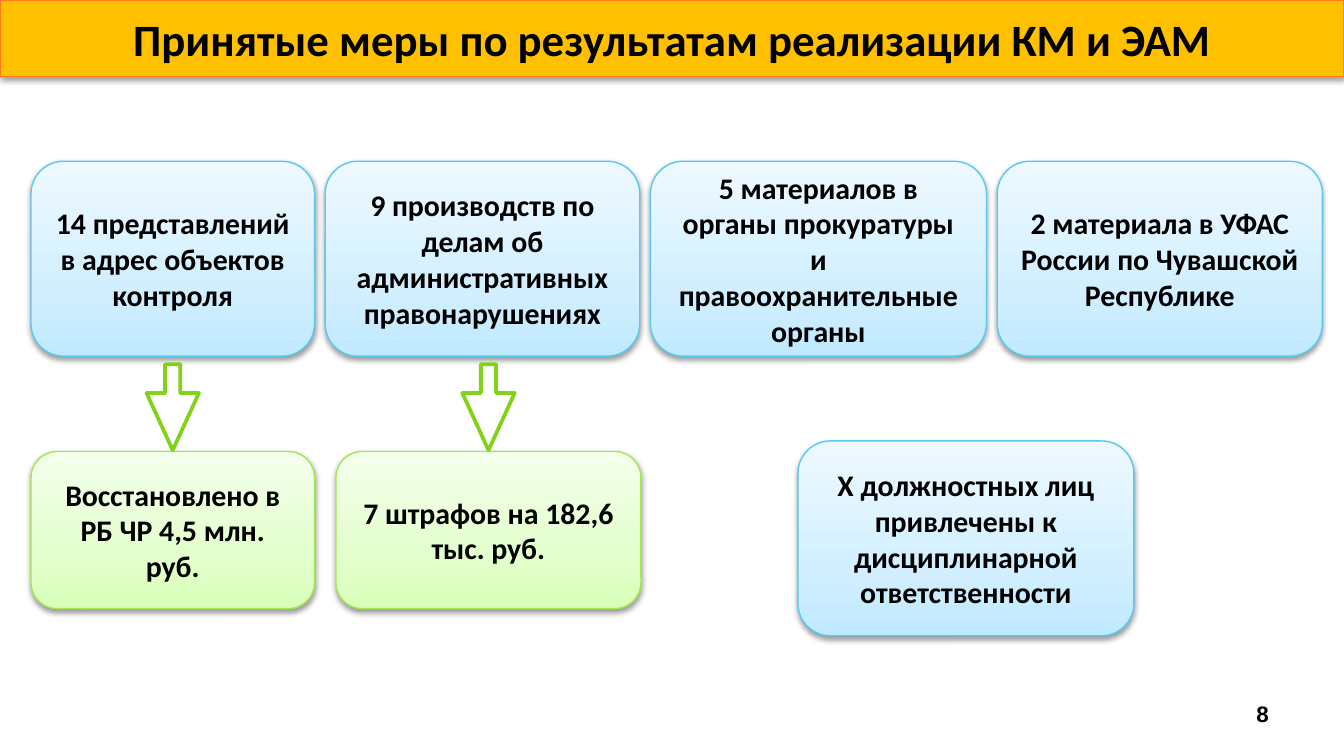
from copy import deepcopy

from lxml import etree
from pptx import Presentation
from pptx.dml import color
from pptx.enum import shapes, text
from pptx.oxml import ns
from pptx.util import Pt

BLACK = "000000"
BLUE = {"stops": [(0, "BFE9FF"), (0.35, "D2EFFF"), (1, "EEF9FF")], "line": "58C9F1"}
GREEN = {"stops": [(0, "D8FFB8"), (0.35, "E3FFCD"), (1, "F4FFEC")], "line": "A4E94C"}
ARROW_GREEN = "81D31A"

LEFT, GAP = 16.6, 5.75
MEASURES_TOP, MEASURES_HEIGHT = 86.4, 104.4
OUTCOMES_TOP, OUTCOMES_HEIGHT = 241.9, 84.2
ARROW_WIDTH, ARROW_HEIGHT = 28.1, 46.1

MEASURES = [
    (151.9, "14 представлений в адрес объектов контроля"),
    (168.5, "9 производств по делам об административных правонарушениях"),
    (180, "5 материалов в органы прокуратуры и правоохранительные органы"),
    (174.2, "2 материала в УФАС России по Чувашской Республике"),
]
OUTCOMES = [
    (LEFT, 151.9, "Восстановлено в РБ ЧР 4,5 млн. руб."),
    (180, 163.4, "7 штрафов на 182,6 тыс. руб."),
]


def rgb(value):
    return color.RGBColor.from_string(value)


def set_text(frame, words, size, align, font="Calibri"):
    para = frame.paragraphs[0]
    para.alignment = align
    span = para.add_run()
    span.text = words
    for name, value in {"size": Pt(size), "name": font, "bold": True}.items():
        setattr(span.font, name, value)
    span.font.color.rgb = rgb(BLACK)


def add_outlined(page, kind, box, line, width):
    shape = page.shapes.add_shape(kind, *map(Pt, box))
    shape.shadow.inherit = False
    shape.line.color.rgb = rgb(line)
    shape.line.width = Pt(width)
    return shape


def add_drop_shadow(shape):
    effects = shape._element.spPr.find(ns.qn("a:effectLst"))
    shadow = etree.SubElement(
        effects, ns.qn("a:outerShdw"), blurRad=str(Pt(3.1)), dist=str(Pt(1.6)),
        dir="5400000", rotWithShape="0")
    tint = etree.SubElement(shadow, ns.qn("a:srgbClr"), val=BLACK)
    etree.SubElement(tint, ns.qn("a:alpha"), val="38000")


def fill_upward(shape, stops):
    """Fill with a gradient whose first stop lies at the bottom edge."""
    shape.fill.gradient()
    shape.fill.gradient_angle = 90
    stop_list = shape._element.spPr.find(".//" + ns.qn("a:gsLst"))
    stop_list.append(deepcopy(stop_list[0]))
    for stop, (position, tint) in zip(shape.fill.gradient_stops, stops):
        stop.position = position
        stop.color.rgb = rgb(tint)


def add_panel(page, box, words, line, size):
    """Add a rounded panel with a drop shadow and centred bold text."""
    panel = add_outlined(page, shapes.MSO_SHAPE.ROUNDED_RECTANGLE, box, line, 0.75)
    add_drop_shadow(panel)
    frame = panel.text_frame
    frame.word_wrap = True
    frame.vertical_anchor = text.MSO_ANCHOR.MIDDLE
    set_text(frame, words, size, text.PP_ALIGN.CENTER)
    return panel


def add_title(page, box, words):
    banner = add_panel(page, box, words, "FF7C1B", 24)
    banner.adjustments[0] = 0
    banner.fill.solid()
    banner.fill.fore_color.rgb = rgb("FFC000")


def add_card(page, box, words, style):
    card = add_panel(page, box, words, style["line"], 16)
    fill_upward(card, style["stops"])


def add_measures(page, left, top, height):
    for width, words in MEASURES:
        add_card(page, (left, top, width, height), words, BLUE)
        left += width + GAP


def add_outcomes(page, top, height):
    """Add the green cards, each with an arrow centred above it."""
    for left, width, words in OUTCOMES:
        add_card(page, (left, top, width, height), words, GREEN)
        arrow_left = left + (width - ARROW_WIDTH) / 2
        box = (arrow_left, top - ARROW_HEIGHT - 0.7, ARROW_WIDTH, ARROW_HEIGHT)
        arrow = add_outlined(page, shapes.MSO_SHAPE.DOWN_ARROW, box, ARROW_GREEN, 2)
        arrow.fill.background()
        arrow.adjustments[0] = 0.29
        arrow.adjustments[1] = 1.09


def add_page_number(page, box, number):
    frame = page.shapes.add_textbox(*map(Pt, box)).text_frame
    frame.word_wrap = False
    frame.auto_size = text.MSO_AUTO_SIZE.SHAPE_TO_FIT_TEXT
    set_text(frame, number, 12, text.PP_ALIGN.LEFT, "Arial")


def main():
    deck = Presentation()
    deck.slide_width, deck.slide_height = Pt(720), Pt(405)
    page = deck.slides.add_slide(deck.slide_layouts[6])
    add_title(page, (0, 0, 720, 41), "Принятые меры по результатам реализации КМ и ЭАМ")
    add_measures(page, LEFT, MEASURES_TOP, MEASURES_HEIGHT)
    add_outcomes(page, OUTCOMES_TOP, OUTCOMES_HEIGHT)
    add_card(page, (427.5, 236.2, 180, MEASURES_HEIGHT),
             "Х должностных лиц привлечены к дисциплинарной ответственности", BLUE)
    add_page_number(page, (666, 371.5, 20.9, 21.6), "8")
    deck.save("out.pptx")


if __name__ == "__main__":
    main()
